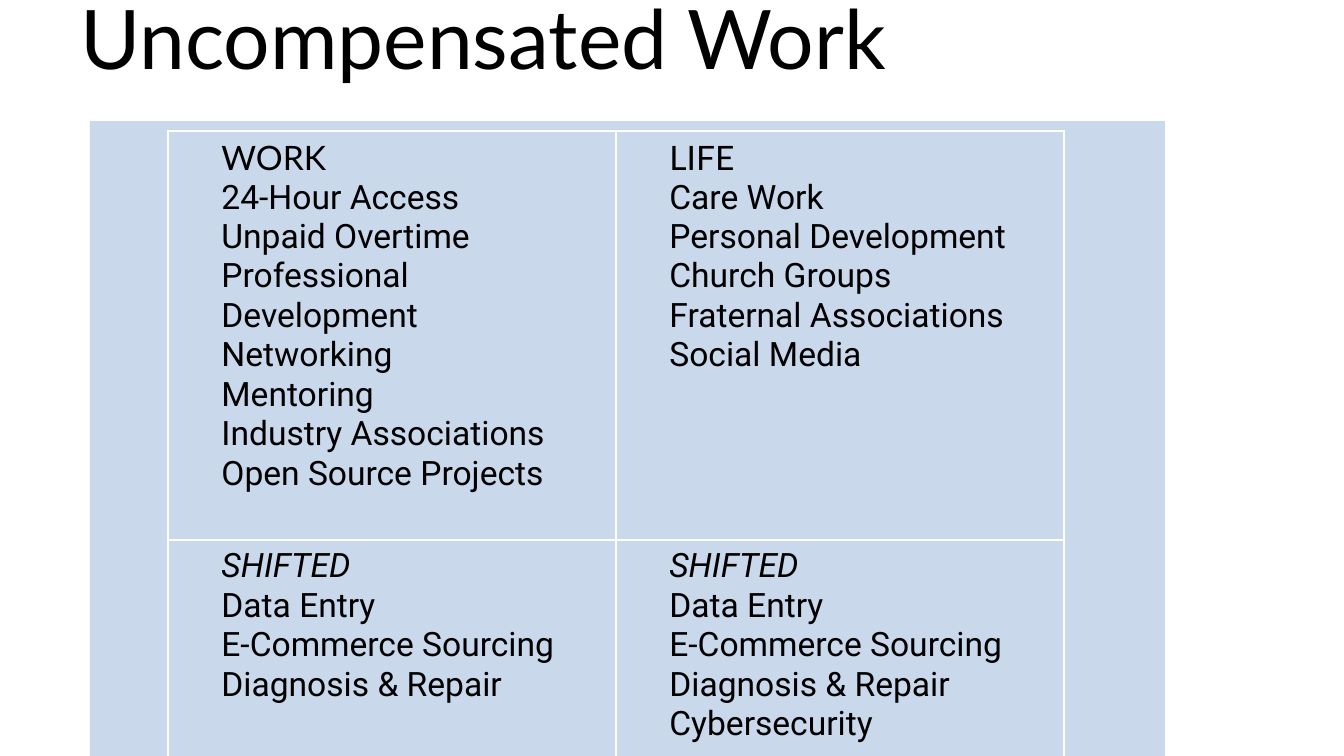
from lxml.etree import SubElement
from pptx import Presentation
from pptx.dml.color import RGBColor
from pptx.enum.shapes import MSO_SHAPE as SHAPE
from pptx.enum.text import MSO_ANCHOR as ANCHOR
from pptx.oxml.ns import qn
from pptx.util import Emu, Pt

PX = 914400 / 134.4


def px(*lengths):
    return [Emu(round(n * PX)) for n in lengths]


def rgb(value):
    return RGBColor.from_string(value)


CELLS = [
    [
        ["WORK", "24-Hour Access", "Unpaid Overtime", "Professional Development",
         "Networking", "Mentoring", "Industry Associations", "Open Source Projects"],
        ["LIFE", "Care Work", "Personal Development", "Church Groups",
         "Fraternal Associations", "Social Media"],
    ],
    [
        ["SHIFTED", "Data Entry", "E-Commerce Sourcing", "Diagnosis & Repair"],
        ["SHIFTED", "Data Entry", "E-Commerce Sourcing", "Diagnosis & Repair",
         "Cybersecurity"],
    ],
]
BODY = {"name": "Roboto", "size": Pt(18), "italic": False}
HEADINGS = [BODY | {"name": "Lato"}, BODY | {"italic": True}]

prs = Presentation()
prs.slide_width, prs.slide_height = px(1344, 756)
s = prs.slides.add_slide(prs.slide_layouts[6])

# Title
tf = s.shapes.add_textbox(*px(67, -26, 1210, 126)).text_frame
tf.word_wrap = True
tf.vertical_anchor = ANCHOR.MIDDLE
r = tf.paragraphs[0].add_run()
r.text = "Uncompensated Work"
for key, value in {"name": "Lato", "size": Pt(44)}.items():
    setattr(r.font, key, value)
r.font.color.rgb = rgb("000000")

# Translucent panel behind the table
panel = s.shapes.add_shape(SHAPE.RECTANGLE, *px(90, 121, 1075, 669))
panel.shadow.inherit = False
panel.fill.solid()
panel.fill.fore_color.rgb = rgb("B9CDE5")
panel.line.fill.background()
color = panel.fill._xPr.find(qn("a:solidFill"))[0]
SubElement(color, qn("a:alpha"), val="76000")

# Work and life table
table = s.shapes.add_table(2, 2, *px(168, 131, 896, 768)).table
table.first_row = table.horz_banding = False
for col in table.columns:
    col.width = px(448)[0]
for row, height in zip(table.rows, px(409, 359)):
    row.height = height

for i, (row, heading) in enumerate(zip(CELLS, HEADINGS)):
    for j, lines in enumerate(row):
        cell = table.cell(i, j)
        tcPr = cell._tc.get_or_add_tcPr()
        for side in ("a:lnL", "a:lnR", "a:lnT", "a:lnB"):
            ln = SubElement(tcPr, qn(side), w=str(Pt(1)))
            fill = SubElement(ln, qn("a:solidFill"))
            SubElement(fill, qn("a:srgbClr"), val="FFFFFF")
        cell.fill.background()
        tf = cell.text_frame
        for n, line in enumerate(lines):
            p = tf.add_paragraph() if n else tf.paragraphs[0]
            p._p.get_or_add_pPr().set("marL", str(px(40)[0]))
            r = p.add_run()
            r.text = line
            for key, value in (BODY if n else heading).items():
                setattr(r.font, key, value)
            r.font.color.rgb = rgb("000000")

prs.save("out.pptx")
